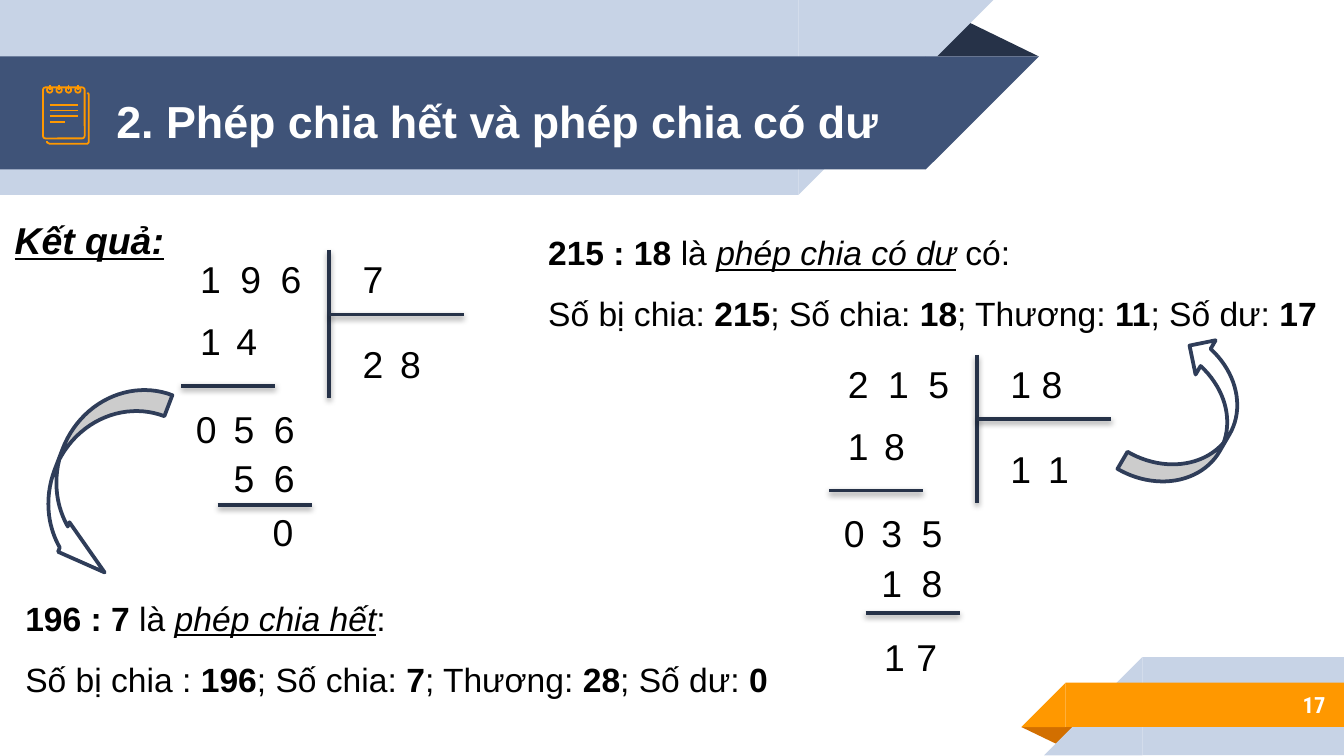
import pptx
import pptx.util
import pptx.dml.color
import pptx.enum.shapes
import pptx.enum.text
import pptx.oxml
import pptx.oxml.ns

Inches = pptx.util.Inches
SHAPES = pptx.enum.shapes.MSO_SHAPE
ALIGN = pptx.enum.text.PP_ALIGN

COLOURS = {
    "white": "FFFFFF", "black": "000000", "navy": "3F5378", "dark": "263248",
    "pale": "C7D3E6", "orange": "FF9800", "rust": "D26F00", "outline": "2F3D59",
}
LINE_SHADOW = (
    '<a:effectLst %s><a:outerShdw blurRad="39370" dist="20320" dir="5400000" rotWithShape="0">'
    '<a:srgbClr val="000000"><a:alpha val="38000"/></a:srgbClr></a:outerShdw></a:effectLst>'
    % pptx.oxml.ns.nsdecls("a"))
NO_EFFECT = "<a:effectLst %s/>" % pptx.oxml.ns.nsdecls("a")


def colour(name):
    return pptx.dml.color.RGBColor.from_string(COLOURS[name])


def add_shape(slide, kind, box, fill=None, line=None, width=1, rotation=0, flip=False):
    shape = slide.shapes.add_shape(kind, *map(Inches, box))
    return style_shape(shape, fill, line, width, rotation, flip)


def style_shape(shape, fill, line, width, rotation=0, flip=False):
    shape.shadow.inherit = False
    if fill:
        shape.fill.solid()
        shape.fill.fore_color.rgb = colour(fill)
    else:
        shape.fill.background()
    if line:
        shape.line.color.rgb = colour(line)
        shape.line.width = pptx.util.Pt(width)
    else:
        shape.line.fill.background()
    shape.rotation = rotation
    if flip:
        shape.element.spPr.get_or_add_xfrm().set("flipH", "1")
    return shape


def add_line(slide, x1, y1, x2, y2, line, width, effect=NO_EFFECT):
    connector = slide.shapes.add_connector(
        pptx.enum.shapes.MSO_CONNECTOR.STRAIGHT, *map(Inches, (x1, y1, x2, y2)))
    connector.line.color.rgb = colour(line)
    connector.line.width = pptx.util.Pt(width)
    connector.element.spPr.append(pptx.oxml.parse_xml(effect))


def add_text(slide, box, paragraphs, size, ink="black", font="Arial", align=ALIGN.LEFT, spacing=None):
    """Each paragraph is a list of (text, styles); styles holds any of b, i, u."""
    textbox = slide.shapes.add_textbox(*map(Inches, box))
    frame = textbox.text_frame
    frame.word_wrap = True
    for index, runs in enumerate(paragraphs):
        paragraph = frame.add_paragraph() if index else frame.paragraphs[0]
        paragraph.alignment = align
        if spacing:
            paragraph.line_spacing = spacing
        for text, styles in runs:
            run = paragraph.add_run()
            run.text = text
            run.font.name = font
            run.font.size = pptx.util.Pt(size)
            run.font.color.rgb = colour(ink)
            run.font.bold = "b" in styles
            run.font.italic = "i" in styles
            run.font.underline = "u" in styles
    return frame


def add_header(slide, left, top):
    fold = add_shape(slide, SHAPES.ISOSCELES_TRIANGLE, (left + 6.88, top + 0.14, 0.85, 0.28), "dark")
    fold.adjustments[0] = 0.324
    for offset, length, height, fill in ((0, 5.94, 1.45, "pale"), (0.42, 6.89, 0.84, "navy")):
        add_shape(slide, SHAPES.RECTANGLE, (left, top + offset, length, height), fill)
        add_shape(slide, SHAPES.RIGHT_TRIANGLE, (left + length, top + offset, height, height),
                  fill, rotation=180, flip=True)


def add_footer(slide, left, top, right, number):
    fold = add_shape(slide, SHAPES.ISOSCELES_TRIANGLE, (left, top + 0.52, 0.43, 0.14), "rust", rotation=180)
    fold.adjustments[0] = 0.324
    for x, y, height, fill in ((0.17, 0, 0.73, "pale"), (0, 0.19, 0.33, "orange")):
        start = left + x + height
        add_shape(slide, SHAPES.RECTANGLE, (start, top + y, right - start, height), fill)
        add_shape(slide, SHAPES.RIGHT_TRIANGLE, (left + x, top + y, height, height), fill, flip=True)
    frame = add_text(slide, (right - 1.67, top + 0.18, 1.63, 0.35), [[(number, "b")]], 12,
                     "white", "Roboto Condensed", ALIGN.RIGHT)
    frame.vertical_anchor = pptx.enum.text.MSO_ANCHOR.MIDDLE
    frame.margin_top = frame.margin_bottom = Inches(0.1)


def add_notebook(slide, left, top):
    stroke = ("orange", 0.96)
    back_page = ((3, 42), (3, 43), (5, 44), (33, 44), (34, 43), (34, 7), (33, 6))
    builder = slide.shapes.build_freeform(*back_page[0], scale=Inches(0.01))
    builder.add_line_segments(back_page[1:], close=False)
    style_shape(builder.convert_to_shape(Inches(left), Inches(top)), None, *stroke)
    page = add_shape(slide, SHAPES.ROUNDED_RECTANGLE, (left, top + 0.02, 0.31, 0.38), None, *stroke)
    page.adjustments[0] = 0.06
    for row, length in enumerate((0.21, 0.21, 0.21, 0.11)):
        y = top + 0.15 + 0.043 * row
        add_line(slide, left + 0.05, y, left + 0.05 + length, y, *stroke)
    for ring in range(4):
        x = left + 0.05 + 0.07 * ring
        add_shape(slide, SHAPES.OVAL, (x - 0.02, top + 0.02, 0.04, 0.04), None, *stroke)
        add_line(slide, x, top, x, top + 0.04, *stroke)


def add_division(slide, left, top, dividend, divisor, quotient, product, steps, remainder, end):
    """Long division; end holds the second rule's y, then the remainder's x and y."""
    rule_y, end_x, end_y = end
    rows = (
        (dividend, (0, 0.3, 0.6), 0),
        ([divisor], (1.21,), 0),
        (quotient, (1.21, 1.49), 0.63),
        (product, (0, 0.27), 0.46),
        (steps[0], (-0.03, 0.25, 0.55), 1.11),
        (steps[1], (0.25, 0.55), 1.48),
        (remainder, (end_x, end_x + 0.24), end_y),
    )
    for digits, offsets, y in rows:
        for digit, x in zip(digits, offsets):
            add_text(slide, (left + x, top + y, 0.66, 0.44), [[(digit, "")]], 20)
    rules = ((1.06, 0, 1.06, 1.1), (1.06, 0.48, 2.06, 0.48),
             (-0.04, 1.01, 0.66, 1.01), (0.23, rule_y, 0.93, rule_y))
    for x1, y1, x2, y2 in rules:
        add_line(slide, left + x1, top + y1, left + x2, top + y2, "dark", 2, LINE_SHADOW)


def add_conclusion(slide, box, operation, kind, ending, label, values):
    names = (label, "; Số chia: ", "; Thương: ", "; Số dư: ")
    detail = [run for name, value in zip(names, values) for run in ((name, ""), (value, "b"))]
    summary = [(operation, "b"), ("là ", ""), (kind, "iu"), (ending, "")]
    add_text(slide, box, [summary, detail], 18, align=ALIGN.JUSTIFY, spacing=1.5)


def main():
    presentation = pptx.Presentation()
    presentation.slide_width = Inches(10)
    presentation.slide_height = Inches(10 * 9 / 16)
    slide = presentation.slides.add_slide(presentation.slide_layouts[6])

    add_header(slide, 0, 0)
    add_footer(slide, 7.6, 4.89, 10, "17")
    add_notebook(slide, 0.32, 0.63)
    add_text(slide, (-0.11, 0.45, 7.62, 0.71), [[("2. Phép chia hết và phép chia có dư", "b")]],
             24, "white", align=ALIGN.CENTER, spacing=1.5)
    add_text(slide, (0.01, 1.57, 2.52, 0.44), [[("Kết quả:", "biu")]], 20, align=ALIGN.JUSTIFY)

    add_division(slide, 1.39, 1.86, "196", "7", "28", "14", ("056", "56"), "0", (1.9, 0.54, 1.88))
    add_division(slide, 6.21, 2.64, "215", "1 8", "11", "18", ("035", "18"), "17", (1.92, 0.27, 2.03))
    add_conclusion(slide, (0.09, 4.25, 6.27, 1.01), "196 : 7 ", "phép chia hết", ": ",
                   "Số bị chia : ", ("196", "7", "28", "0"))
    add_conclusion(slide, (3.98, 1.53, 5.95, 1.01), "215 : 18 ", "phép chia có dư", " có: ",
                   "Số bị chia: ", ("215", "18", "11", "17"))

    arrows = (((8.58, 2.51, 0.59, 1.21), 210.3, (0.25, 0.5, 0.25)),
              ((0.41, 2.78, 0.62, 1.53), 20.9, (0.27, 0.38, 0.61)))
    for box, rotation, adjustments in arrows:
        arrow = add_shape(slide, SHAPES.CURVED_RIGHT_ARROW, box, "white", "outline", 2, rotation)
        for index, value in enumerate(adjustments):
            arrow.adjustments[index] = value

    presentation.save("out.pptx")


if __name__ == "__main__":
    main()
